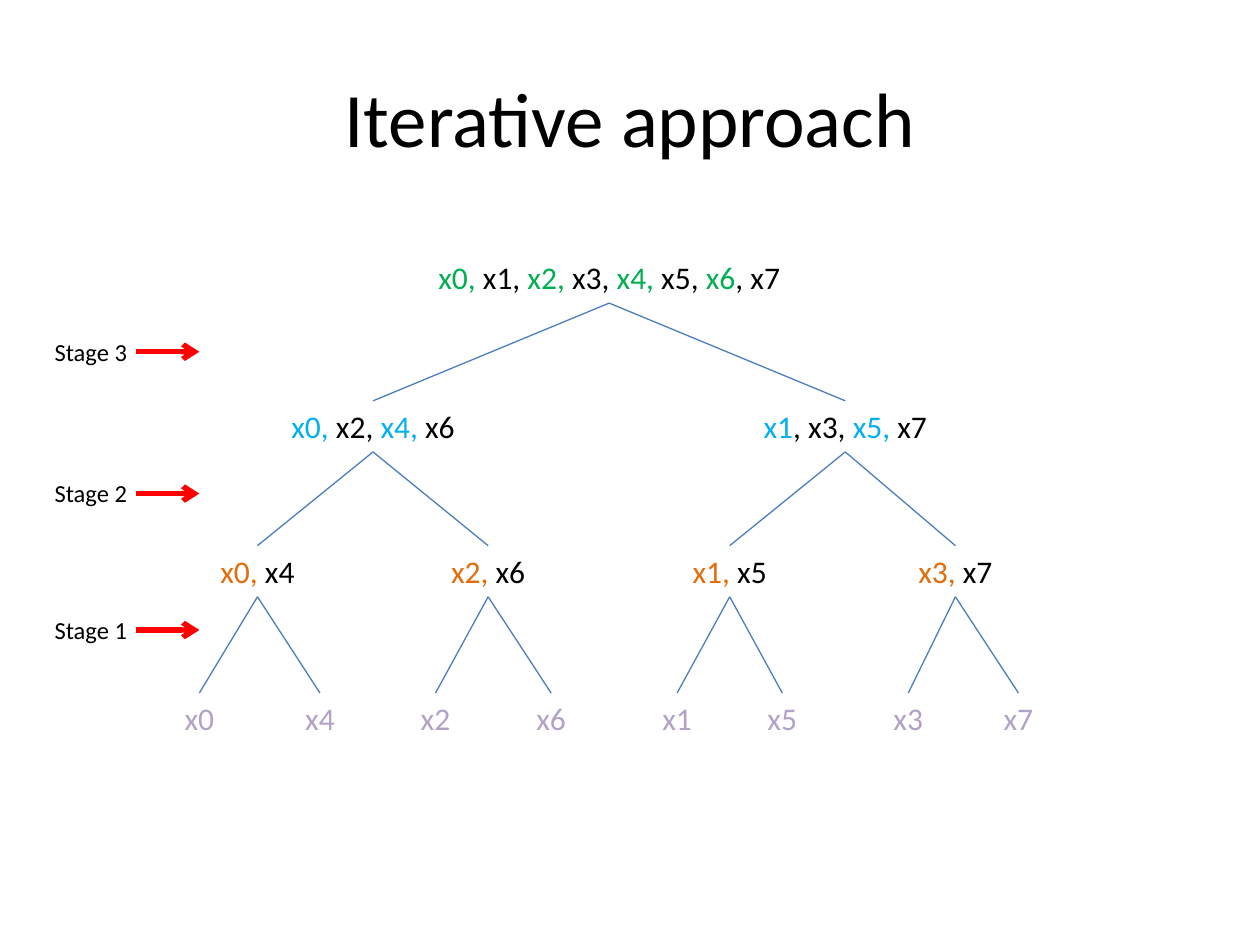
from lxml import etree
from pptx import Presentation
from pptx.dml.color import RGBColor
from pptx.enum.shapes import MSO_CONNECTOR
from pptx.enum.text import MSO_ANCHOR, MSO_AUTO_SIZE, PP_ALIGN
from pptx.oxml.ns import qn
from pptx.util import Cm, Pt

STRAIGHT = MSO_CONNECTOR.STRAIGHT
MIDDLE = MSO_ANCHOR.MIDDLE
FIT_SHAPE = MSO_AUTO_SIZE.SHAPE_TO_FIT_TEXT
CENTER, LEFT = PP_ALIGN.CENTER, PP_ALIGN.LEFT

BLACK = RGBColor(0x00, 0x00, 0x00)
GREEN = RGBColor(0x00, 0xB0, 0x50)
SKY = RGBColor(0x00, 0xB0, 0xF0)
ORANGE = RGBColor(0xE4, 0x6C, 0x0A)
LILAC = RGBColor(0xB3, 0xA2, 0xC7)
BLUE = RGBColor(0x4B, 0x7E, 0xBC)
RED = RGBColor(0xFF, 0x00, 0x00)
FONT = "Calibri"
NODE_HEIGHT = 1.03

# Each level: top, node width, accent colour, nodes as (centre, pieces);
# the pieces of a node alternate between accent and black
LEVELS = [
    (5.08, 7.62, GREEN, [
        (12.28, ["x0, ", "x1, ", "x2, ", "x3, ", "x4,", " x5, ", "x6", ", x7"])]),
    (8.08, 4.02, SKY, [
        (7.52, ["x0, ", "x2, ", "x4,", " x6"]),
        (17.04, ["x1", ", x3, ", "x5,", " x7"])]),
    (11, 2.33, ORANGE, [
        (5.19, ["x0,", " x4"]), (9.84, ["x2,", " x6"]),
        (14.71, ["x1,", " x5"]), (19.26, ["x3,", " x7"])]),
    (13.97, 1.48, LILAC, [
        (4.02, ["x0"]), (6.45, ["x4"]), (8.78, ["x2"]), (11.11, ["x6"]),
        (13.65, ["x1"]), (15.77, ["x5"]), (18.31, ["x3"]), (20.53, ["x7"])]),
]
STAGES = [("Stage 3", 7.09), ("Stage 2", 9.95), ("Stage 1", 12.7)]

prs = Presentation()
prs.slide_width, prs.slide_height = Cm(25.4), Cm(19.05)
slide = prs.slides.add_slide(prs.slide_layouts[5])


def add_label(left, top, width, height, pieces, colors, size, align):
    label = slide.shapes.add_textbox(Cm(left), Cm(top), Cm(width), Cm(height))
    frame = label.text_frame
    frame.word_wrap = True
    frame.auto_size = FIT_SHAPE
    paragraph = frame.paragraphs[0]
    paragraph.alignment = align
    paragraph.font.size = Pt(size)
    paragraph.font.name = FONT
    for i, piece in enumerate(pieces):
        run = paragraph.add_run()
        run.text = piece
        run.font.color.rgb = colors[i % len(colors)]


def add_line(x1, y1, x2, y2, color, width):
    connector = slide.shapes.add_connector(STRAIGHT, Cm(x1), Cm(y1), Cm(x2), Cm(y2))
    connector.line.color.rgb = color
    connector.line.width = Pt(width)
    etree.SubElement(connector._element.spPr, qn("a:effectLst"))
    return connector


# Title
title = slide.shapes.title
title.left, title.top, title.width, title.height = Cm(1.27), Cm(0.76), Cm(22.86), Cm(3.18)
title.text_frame.text = "Iterative approach"
title.text_frame.vertical_anchor = MIDDLE
heading = title.text_frame.paragraphs[0]
heading.alignment = CENTER
heading.font.size = Pt(44)
heading.font.name = FONT
heading.font.color.rgb = BLACK

# Tree nodes
for top, width, accent, nodes in LEVELS:
    for center, pieces in nodes:
        add_label(center - width / 2, top, width, NODE_HEIGHT, pieces,
                  [accent, BLACK], 18, CENTER)

# Branches: child i hangs from parent i // 2 of the level above
for (parent_top, _, _, parents), (child_top, _, _, children) in zip(LEVELS, LEVELS[1:]):
    for i, (child_center, _) in enumerate(children):
        add_line(parents[i // 2][0], parent_top + NODE_HEIGHT,
                 child_center, child_top, BLUE, 0.75)

# Stage labels with arrows
for stage, y in STAGES:
    arrow = add_line(2.75, y, 4.02, y, RED, 3)
    etree.SubElement(arrow.line._get_or_add_ln(), qn("a:tailEnd"), type="arrow")
    add_label(0.85, y - 0.43, 2.43, 0.85, [stage], [BLACK], 14, LEFT)

prs.save("out.pptx")
